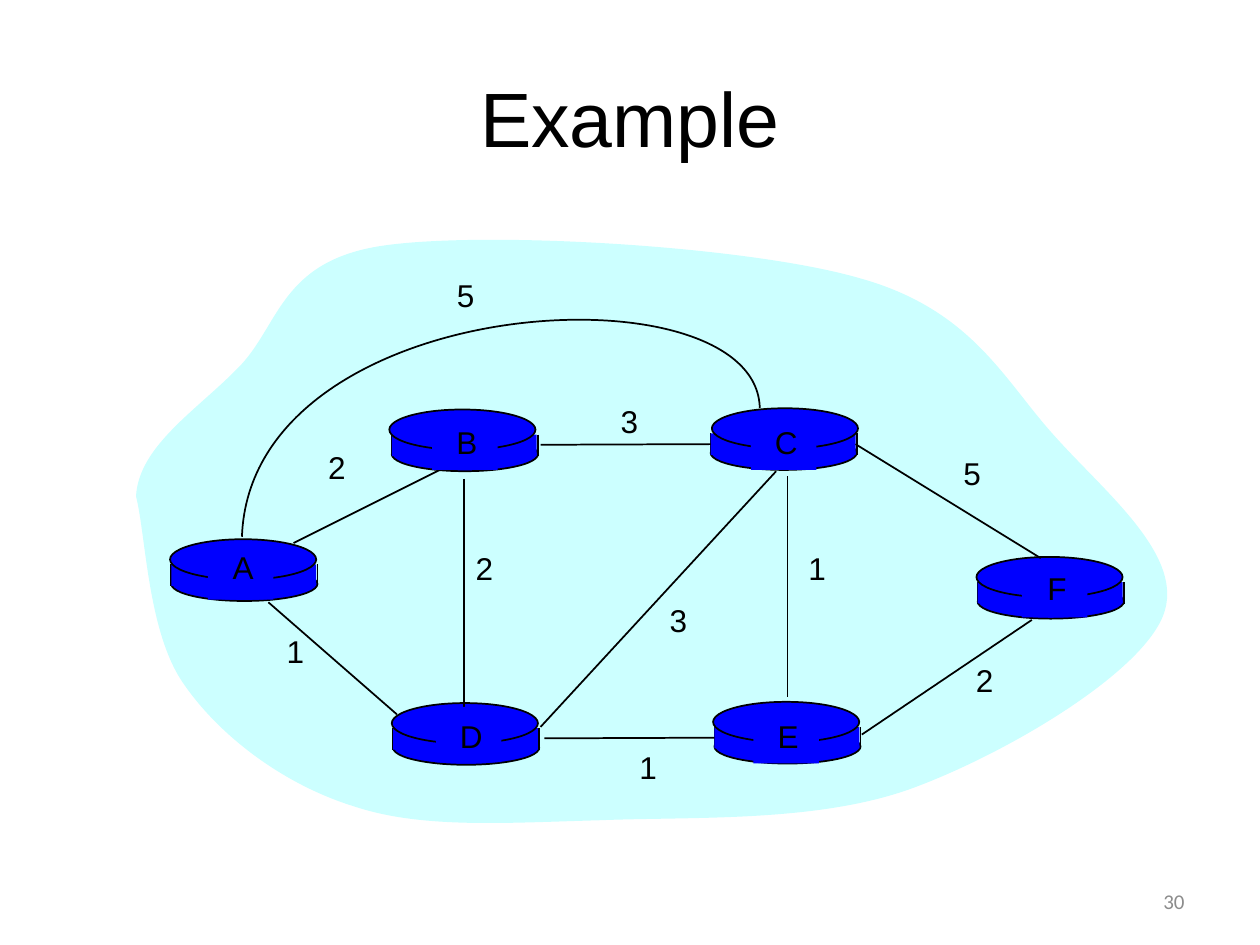
from dataclasses import dataclass
from typing import Optional

from lxml.etree import SubElement
from pptx import Presentation
from pptx.dml.color import RGBColor
from pptx.enum.shapes import MSO_CONNECTOR, MSO_SHAPE
from pptx.enum.text import MSO_ANCHOR, MSO_AUTO_SIZE, PP_ALIGN
from pptx.oxml.ns import qn
from pptx.util import Emu, Pt

EMU_PER_PX = 9144
COLORS = {"ink": "000000", "cloud": "CCFFFF", "router": "0000FF", "number": "8C8C8C"}
LEFT_SIDE, RIGHT_SIDE = 1, 3


@dataclass(frozen=True)
class Router:
    name: str
    left: int
    top: int
    cap_left: int
    patch: tuple[int, int]
    label: tuple[int, int, int]


@dataclass(frozen=True)
class Edge:
    start: tuple[int, int]
    end: tuple[int, int]
    router: Optional[str] = None
    side: int = LEFT_SIDE


@dataclass(frozen=True)
class Cost:
    text: str
    left: int
    top: int


ROUTERS = [
    Router("A", 136, 448, 135, (165, 432), (164, 430, 58)),
    Router("D", 312, 578, 311, (346, 561), (344, 564, 60)),
    Router("B", 311, 345, 309, (343, 329), (342, 331, 57)),
    Router("C", 564, 344, 565, (596, 329), (594, 331, 60)),
    Router("E", 567, 577, 566, (598, 562), (597, 564, 57)),
    Router("F", 776, 462, 775, (811, 446), (811, 447, 56)),
]
EDGES = [
    Edge((233, 431), (359, 368)),
    Edge((625, 378), (625, 553)),
    Edge((368, 380), (368, 561)),
    Edge((429, 577), (616, 374)),
    Edge((684, 583), (819, 492)),
    Edge((432, 586), (567, 586), "E"),
    Edge((315, 567), (213, 478)),
    Edge((429, 353), (564, 353), "C"),
    Edge((826, 443), (679, 353), "C", RIGHT_SIDE),
]
COSTS = [
    Cost("2", 241, 351), Cost("2", 358, 431), Cost("1", 208, 497),
    Cost("3", 512, 472), Cost("1", 488, 589), Cost("1", 622, 431),
    Cost("2", 755, 520), Cost("5", 745, 355), Cost("3", 473, 314),
    Cost("5", 343, 214),
]
CLOUD = [
    (108, 394), (110, 354), (157, 325), (189, 292), (222, 259), (222, 207), (304, 195),
    (386, 183), (594, 195), (683, 221), (772, 246), (797, 302), (837, 346),
    (877, 391), (942, 442), (923, 489), (904, 536), (797, 599), (723, 626),
    (648, 653), (550, 648), (476, 651), (402, 653), (335, 658), (281, 640),
    (226, 623), (175, 585), (146, 543), (117, 502), (116, 425), (108, 394),
]
LONG_EDGE = [(603, 324), (601, 209), (199, 230), (192, 426)]


def px(value: int) -> Emu:
    return Emu(value * EMU_PER_PX)


def color(name: str) -> RGBColor:
    return RGBColor.from_string(COLORS[name])


def style(shape, fill: Optional[str], outlined: bool) -> None:
    shape.shadow.inherit = False
    if fill:
        shape.fill.solid()
        shape.fill.fore_color.rgb = color(fill)
    else:
        shape.fill.background()
    if outlined:
        shape.line.color.rgb = color("ink")
        shape.line.width = Pt(1)
    else:
        shape.line.fill.background()


def add_filled(slide, kind, left: int, top: int, width: int, height: int, outlined: bool):
    shape = slide.shapes.add_shape(kind, px(left), px(top), px(width), px(height))
    style(shape, "router", outlined)
    return shape


def add_line(slide, start: tuple[int, int], end: tuple[int, int]):
    line = slide.shapes.add_connector(MSO_CONNECTOR.STRAIGHT, *map(px, start + end))
    line.line.color.rgb = color("ink")
    line.line.width = Pt(1)
    SubElement(line._element.spPr, qn("a:effectLst"))
    return line


def add_curve(slide, points: list[tuple[int, int]], fill: Optional[str], outlined: bool) -> None:
    builder = slide.shapes.build_freeform(*points[0], scale=EMU_PER_PX)
    builder.add_line_segments(points[1:], close=points[0] == points[-1])
    shape = builder.convert_to_shape()
    style(shape, fill, outlined)
    segments = list(shape._element.iter(qn("a:lnTo")))
    for first in range(0, len(segments), 3):
        curve = segments[first]
        curve.tag = qn("a:cubicBezTo")
        for segment in segments[first + 1:first + 3]:
            curve.append(segment[0])
            segment.getparent().remove(segment)


def add_text(slide, text: str, box: tuple[int, int, int, int], size: int = 18,
             font: str = "Arial", ink: str = "ink", align=PP_ALIGN.CENTER,
             fitted: bool = False) -> None:
    text_frame = slide.shapes.add_textbox(*map(px, box)).text_frame
    text_frame.text = text
    text_frame.word_wrap = not fitted
    if fitted:
        text_frame.auto_size = MSO_AUTO_SIZE.SHAPE_TO_FIT_TEXT
    else:
        text_frame.vertical_anchor = MSO_ANCHOR.MIDDLE
    paragraph = text_frame.paragraphs[0]
    paragraph.alignment = align
    run_font = paragraph.runs[0].font
    run_font.name = font
    run_font.size = Pt(size)
    run_font.color.rgb = color(ink)


def add_router(slide, router: Router):
    left, top = router.left, router.top
    add_filled(slide, MSO_SHAPE.OVAL, left, top + 2, 116, 27, True)
    for side in (left, left + 116):
        add_line(slide, (side, top), (side, top + 17))
    body = add_filled(slide, MSO_SHAPE.RECTANGLE, left, top, 115, 17, False)
    add_filled(slide, MSO_SHAPE.OVAL, router.cap_left, top - 20, 116, 32, True)
    return body


def add_router_name(slide, router: Router) -> None:
    add_filled(slide, MSO_SHAPE.RECTANGLE, *router.patch, 52, 44, False)
    add_text(slide, router.name, (*router.label, 61), fitted=True)


def main() -> None:
    presentation = Presentation()
    presentation.slide_width, presentation.slide_height = px(1000), px(750)
    slide = presentation.slides.add_slide(presentation.slide_layouts[6])

    add_text(slide, "Example", (50, 30, 900, 125), size=44)
    add_curve(slide, CLOUD, "cloud", False)
    bodies = {router.name: add_router(slide, router) for router in ROUTERS}
    for edge in EDGES:
        line = add_line(slide, edge.start, edge.end)
        if edge.router:
            line.end_connect(bodies[edge.router], edge.side)
    add_curve(slide, LONG_EDGE, None, True)
    for router in ROUTERS:
        add_router_name(slide, router)
    for cost in COSTS:
        add_text(slide, cost.text, (cost.left, cost.top, 53, 61), fitted=True)
    add_text(slide, "30", (717, 695, 233, 40), 12, "Calibri", "number", PP_ALIGN.RIGHT)

    presentation.save("out.pptx")


if __name__ == "__main__":
    main()
